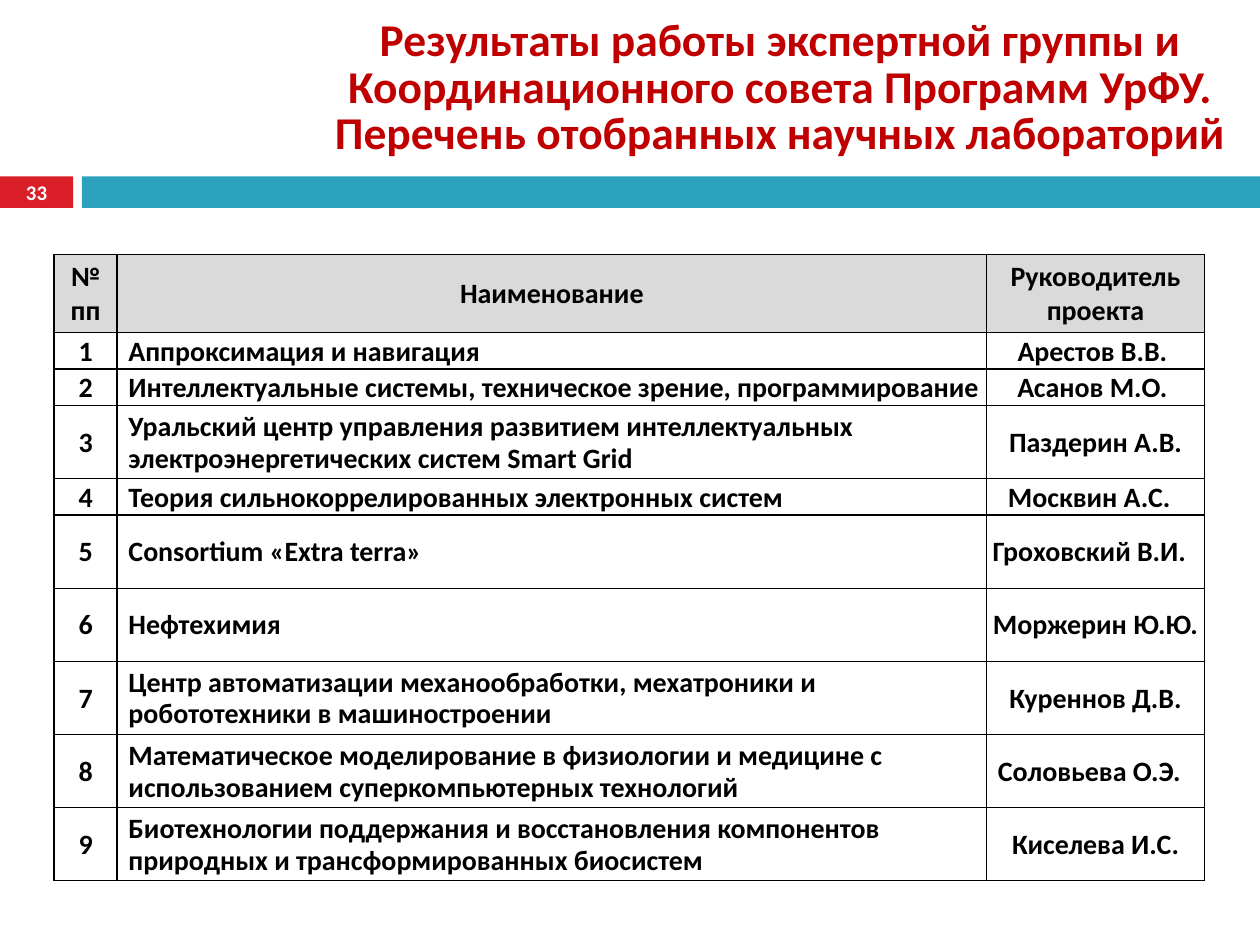
"""Build the slide that lists the selected research laboratories."""
from typing import NamedTuple

import pptx
import pptx.dml.color
import pptx.enum.shapes
import pptx.enum.text
import pptx.oxml
import pptx.oxml.ns
import pptx.util
from pptx.util import Inches

FONT = "Calibri"
CENTER = pptx.enum.text.PP_ALIGN.CENTER
LEFT = pptx.enum.text.PP_ALIGN.LEFT
MIDDLE = pptx.enum.text.MSO_ANCHOR.MIDDLE
COLUMN_WIDTHS = (0.5, 6.9, 1.73)
HEADINGS = ("№ пп", "Наименование", "Руководитель проекта")
HEADER_HEIGHT = 0.62
LINE_HEIGHT = 0.29


class Lab(NamedTuple):
    name: str
    leader: str
    lines: int = 1
    shift: float = 0


class Band(NamedTuple):
    left: float
    width: float
    color: str


LABS = (
    Lab("Аппроксимация и навигация", "Арестов В.В.", shift=0.05),
    Lab("Интеллектуальные системы, техническое зрение, программирование",
        "Асанов М.О.", shift=0.05),
    Lab("Уральский центр управления развитием интеллектуальных "
        "электроэнергетических систем Smart Grid", "Паздерин А.В.", 2),
    Lab("Теория сильнокоррелированных электронных систем", "Москвин А.С.", shift=0.1),
    Lab("Consortium «Extra terra»", "Гроховский В.И.", 2, 0.1),
    Lab("Нефтехимия", "Моржерин Ю.Ю.", 2),
    Lab("Центр автоматизации механообработки, мехатроники и "
        "робототехники в машиностроении", "Куреннов Д.В.", 2),
    Lab("Математическое моделирование в физиологии и медицине с "
        "использованием суперкомпьютерных технологий", "Соловьева О.Э.", 2, 0.1),
    Lab("Биотехнологии поддержания и восстановления компонентов "
        "природных и трансформированных биосистем", "Киселева И.С.", 2),
)
BANDS = (Band(0, 0.58, "DA1F28"), Band(0.65, 9.35, "2DA2BF"))


def rgb(color: str) -> pptx.dml.color.RGBColor:
    """Turn a hex string into a colour."""
    return pptx.dml.color.RGBColor.from_string(color)


def style(para, size: float, color: str, align=CENTER) -> None:
    """Set the bold font and the alignment of a paragraph."""
    para.alignment = align
    para.font.name = FONT
    para.font.size = pptx.util.Pt(size)
    para.font.bold = True
    para.font.color.rgb = rgb(color)


def add_band(page, band: Band) -> None:
    """Draw one plain rectangle of the strip under the title."""
    shape = page.shapes.add_shape(
        pptx.enum.shapes.MSO_SHAPE.RECTANGLE,
        Inches(band.left), Inches(1.4), Inches(band.width), Inches(0.25))
    shape.shadow.inherit = False
    shape.fill.solid()
    shape.fill.fore_color.rgb = rgb(band.color)
    shape.line.fill.background()


def add_title(page) -> None:
    """Place and format the slide title."""
    title = page.shapes.title
    title.left, title.top = Inches(2.51), Inches(0.13)
    title.width, title.height = Inches(7.37), Inches(1.18)
    frame = title.text_frame
    frame.text = ("Результаты работы экспертной группы и Координационного совета "
                  "Программ УрФУ. Перечень отобранных научных лабораторий")
    frame.word_wrap = True
    frame.auto_size = pptx.enum.text.MSO_AUTO_SIZE.NONE
    frame.vertical_anchor = pptx.enum.text.MSO_ANCHOR.BOTTOM
    para = frame.paragraphs[0]
    para.line_spacing = 0.85
    style(para, 26, "C00000")


def add_page_number(page) -> None:
    """Write the page number on the red band."""
    box = page.shapes.add_textbox(0, Inches(1.39), Inches(0.58), Inches(0.27))
    frame = box.text_frame
    frame.word_wrap = True
    frame.vertical_anchor = MIDDLE
    frame.text = "33"
    style(frame.paragraphs[0], 11.9, "FFFFFF")


def add_borders(cell) -> None:
    """Give a cell thin black borders on all four sides."""
    properties = cell._tc.get_or_add_tcPr()
    namespace = pptx.oxml.ns.nsdecls("a")
    for index, side in enumerate(("lnL", "lnR", "lnT", "lnB")):
        properties.insert(index, pptx.oxml.parse_xml(
            f'<a:{side} {namespace} w="12700"><a:solidFill>'
            f'<a:srgbClr val="000000"/></a:solidFill></a:{side}>'))


def fill_cell(cell, text: str, color: str, inset: float = 0, align=CENTER,
              spacing: float = 1, indent: float = 0, shift: float = 0) -> None:
    """Write and format one table cell."""
    cell.text = text
    cell.vertical_anchor = MIDDLE
    cell.margin_left = Inches(inset + indent)
    cell.margin_right = Inches(inset + shift)
    cell.margin_top, cell.margin_bottom = Inches(inset), 0
    cell.fill.solid()
    cell.fill.fore_color.rgb = rgb(color)
    para = cell.text_frame.paragraphs[0]
    para.line_spacing = spacing
    para.space_after = pptx.util.Pt(3)
    style(para, 16, "000000", align)
    add_borders(cell)


def add_lab_table(page) -> None:
    """Draw the table of laboratories and their leaders."""
    heights = [HEADER_HEIGHT] + [LINE_HEIGHT * lab.lines for lab in LABS]
    table = page.shapes.add_table(
        len(heights), len(COLUMN_WIDTHS), Inches(0.43), Inches(2.02),
        Inches(sum(COLUMN_WIDTHS)), Inches(sum(heights))).table
    for column, width in zip(table.columns, COLUMN_WIDTHS):
        column.width = Inches(width)
    for row, height in zip(table.rows, heights):
        row.height = Inches(height)
    for index, heading in enumerate(HEADINGS):
        fill_cell(table.cell(0, index), heading, "DADADA")
    for number, lab in enumerate(LABS, 1):
        body = {"color": "FFFFFF", "inset": 0.01, "spacing": 0.93}
        fill_cell(table.cell(number, 0), str(number), **body)
        fill_cell(table.cell(number, 1), lab.name, align=LEFT, indent=0.08, **body)
        fill_cell(table.cell(number, 2), lab.leader, shift=lab.shift, **body)


def main() -> None:
    """Build the deck and save it."""
    deck = pptx.Presentation()
    deck.slide_width, deck.slide_height = Inches(10), Inches(7.5)
    page = deck.slides.add_slide(deck.slide_layouts.get_by_name("Title Only"))
    for band in BANDS:
        add_band(page, band)
    add_title(page)
    add_page_number(page)
    add_lab_table(page)
    deck.save("out.pptx")


if __name__ == "__main__":
    main()
